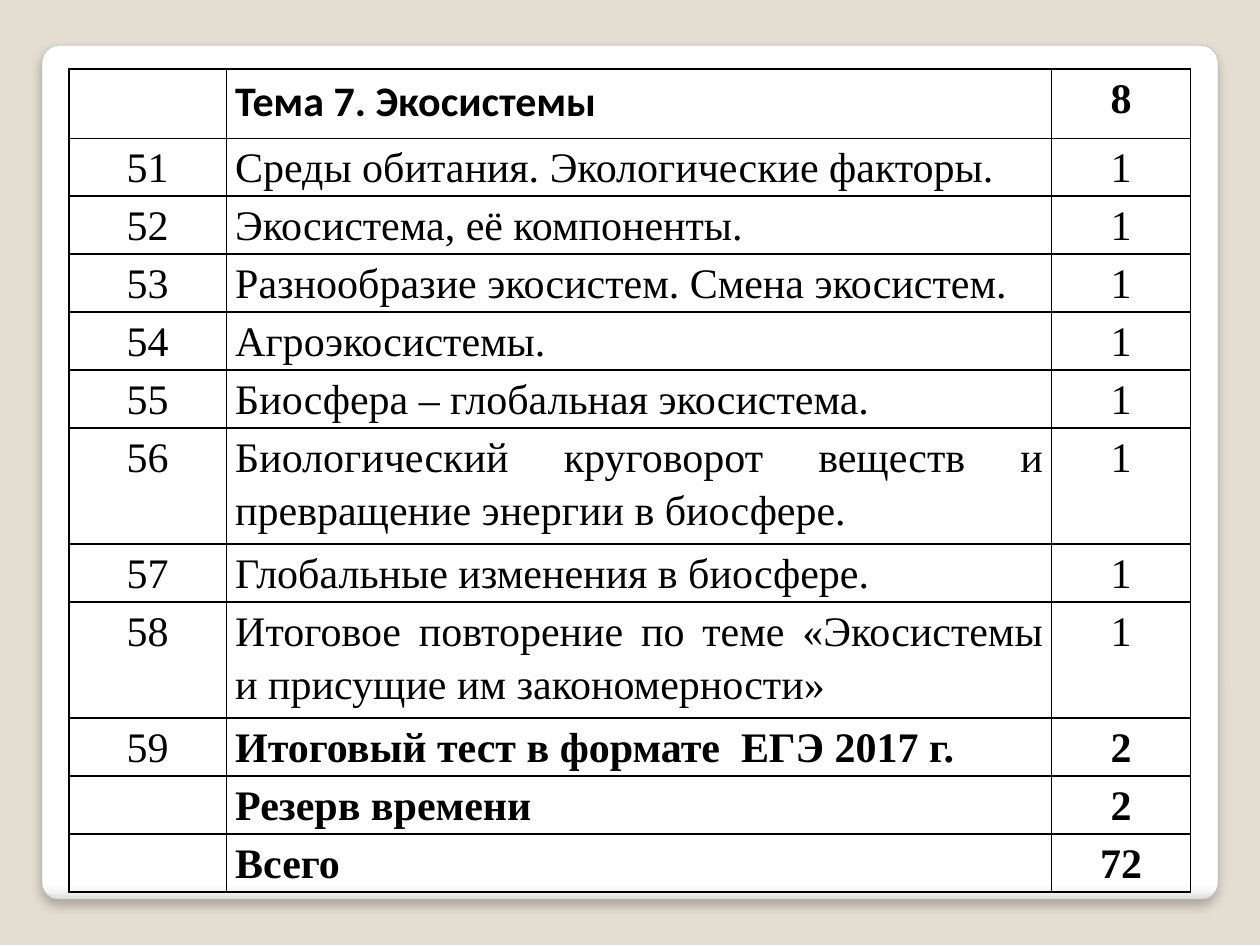
from lxml import etree
from pptx import Presentation
from pptx.dml.color import RGBColor
from pptx.enum.shapes import MSO_SHAPE
from pptx.enum.text import PP_ALIGN
from pptx.oxml.ns import qn
from pptx.util import Pt

ROUND = MSO_SHAPE.ROUNDED_RECTANGLE
CENTER, JUSTIFY = PP_ALIGN.CENTER, PP_ALIGN.JUSTIFY
SAND = RGBColor(0xE3, 0xDE, 0xD1)
WHITE = RGBColor(0xFF, 0xFF, 0xFF)
PALE = RGBColor(0xF7, 0xF7, 0xF7)
SILVER = RGBColor(0xDA, 0xDA, 0xDA)
GRAY = RGBColor(0xA4, 0xA4, 0xA4)
BLACK = RGBColor(0, 0, 0)
SERIF, SANS = "Times New Roman", "Calibri"
STOPS = [(0, WHITE), (98, WHITE), (99, PALE), (100, SILVER)]
WIDTHS = [90, 471.6, 79.2]
HEAD, LINE = 39.6, 33.14
TOPICS = [
    ("", "Тема 7. Экосистемы", "8"),
    ("51", "Среды обитания. Экологические факторы. ", "1"),
    ("52", "Экосистема, её компоненты. ", "1"),
    ("53", "Разнообразие экосистем. Смена экосистем.", "1"),
    ("54", "Агроэкосистемы. ", "1"),
    ("55", "Биосфера – глобальная экосистема. ", "1"),
    ("56", "Биологический круговорот веществ и превращение энергии в биосфере.", "1"),
    ("57", "Глобальные изменения в биосфере.", "1"),
    ("58", "Итоговое повторение по теме «Экосистемы и присущие им закономерности»", "1"),
    ("59", "Итоговый тест в формате  ЕГЭ 2017 г.", "2"),
    ("", "Резерв времени ", "2"),
    ("", "Всего", "72"),
]
DOUBLE = {"56", "58"}
TOTALS = 9


def add_node(parent, tag, **attrs):
    """Append a drawing element with the given attributes."""
    node = etree.SubElement(parent, qn(tag))
    for key, value in attrs.items():
        node.set(key, str(value))
    return node


def add_color(parent, color):
    """Append a plain colour element."""
    return add_node(parent, "a:srgbClr", val=color)


def add_panel(slide, left, top, width, height):
    """Draw the rounded panel with its gradient and soft shadow."""
    panel = slide.shapes.add_shape(ROUND, Pt(left), Pt(top), Pt(width), Pt(height))
    panel.adjustments[0] = 0.02
    panel.line.color.rgb = GRAY
    panel.line.width = Pt(0.16)
    panel.fill.gradient()
    panel.fill.gradient_angle = 270
    panel.shadow.inherit = False
    props = panel._element.spPr
    stops = props.find(".//" + qn("a:gsLst"))
    for old in list(stops):
        stops.remove(old)
    for place, color in STOPS:
        add_color(add_node(stops, "a:gs", pos=place * 1000), color)
    shade = add_node(props.find(qn("a:effectLst")), "a:outerShdw",
                     blurRad=Pt(6), dist=Pt(4), dir=5400000, rotWithShape=0)
    add_node(add_color(shade, BLACK), "a:alpha", val=25000)


def add_edges(cell):
    """Give a cell thin black borders on all sides."""
    props = cell._tc.get_or_add_tcPr()
    for side in "LRTB":
        edge = add_node(props, "a:ln" + side, w=Pt(1))
        add_color(add_node(edge, "a:solidFill"), BLACK)


def fill_cell(cell, text, align, font, bold):
    """Set a cell's borders, margins and text."""
    add_edges(cell)
    cell.fill.background()
    if not text:
        return
    cell.margin_left = cell.margin_right = Pt(5)
    cell.margin_top = cell.margin_bottom = 0
    para = cell.text_frame.paragraphs[0]
    para.alignment = align
    para.line_spacing = 1.15
    run = para.add_run()
    run.text = text
    run.font.name = font
    run.font.size = Pt(24)
    run.font.bold = bold
    run.font.color.rgb = BLACK


def add_plan(slide, left, top):
    """Lay out the table of lessons and hours."""
    heights = [HEAD] + [LINE * (2 if row[0] in DOUBLE else 1) for row in TOPICS[1:]]
    frame = slide.shapes.add_table(len(TOPICS), len(WIDTHS), Pt(left), Pt(top),
                                   Pt(sum(WIDTHS)), Pt(sum(heights)))
    table = frame.table
    table.first_row = table.horz_banding = False
    for col, width in zip(table.columns, WIDTHS):
        col.width = Pt(width)
    for i, (number, topic, hours) in enumerate(TOPICS):
        table.rows[i].height = Pt(heights[i])
        bold = i == 0 or i >= TOTALS
        fill_cell(table.cell(i, 0), number, CENTER, SERIF, False)
        fill_cell(table.cell(i, 1), topic, JUSTIFY, SERIF if i else SANS, bold)
        fill_cell(table.cell(i, 2), hours, CENTER, SERIF, bold)


def main():
    """Build the slide and save it."""
    deck = Presentation()
    deck.slide_width, deck.slide_height = Pt(720), Pt(540)
    slide = deck.slides.add_slide(deck.slide_layouts[6])
    back = slide.background.fill
    back.solid()
    back.fore_color.rgb = SAND
    add_panel(slide, 24, 26, 672, 488)
    add_plan(slide, 39.4, 39.4)
    deck.save("out.pptx")


if __name__ == "__main__":
    main()
